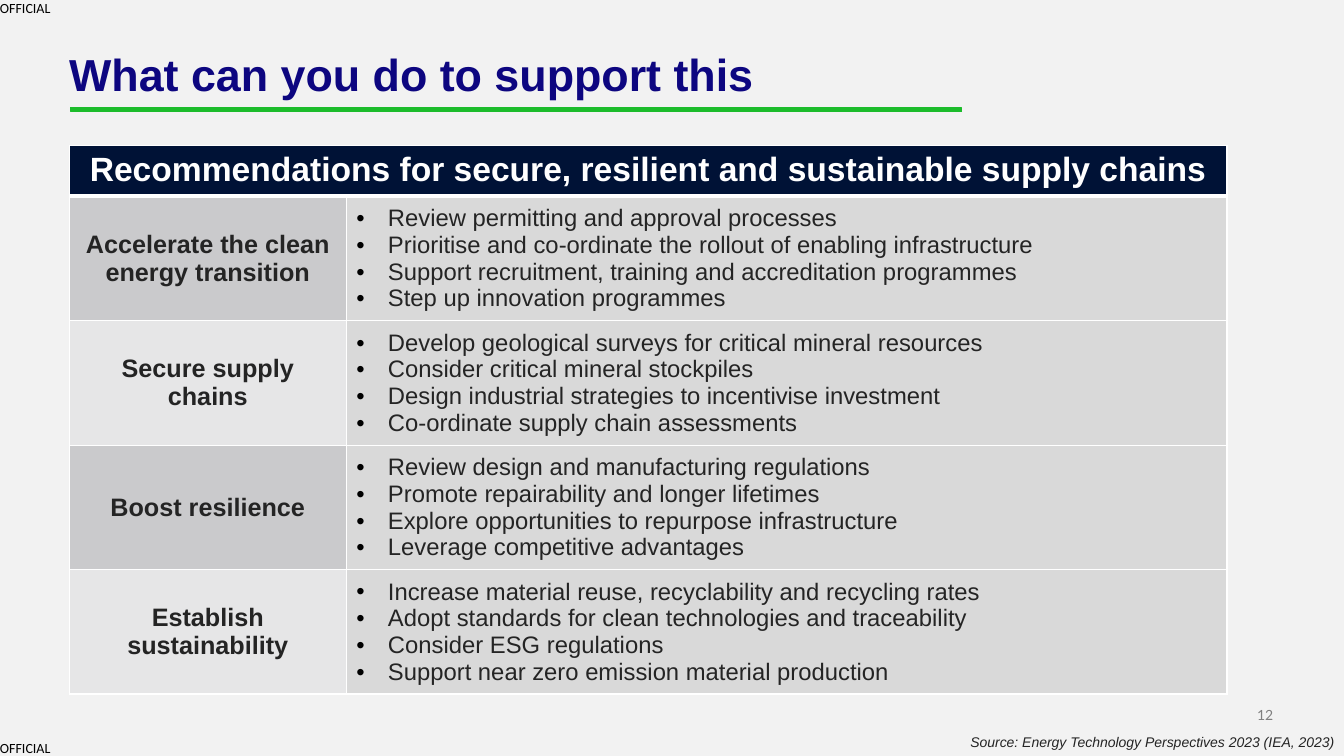
from lxml.etree import SubElement
from pptx import Presentation
from pptx.dml.color import RGBColor
from pptx.enum.text import MSO_ANCHOR as Anchor, PP_ALIGN as Align
from pptx.oxml import parse_xml
from pptx.oxml.ns import nsdecls, qn
from pptx.util import Pt

PAPER = RGBColor(0xF2, 0xF2, 0xF2)
BLACK = RGBColor(0, 0, 0)
WHITE = RGBColor(0xFF, 0xFF, 0xFF)
INK = RGBColor(0x24, 0x24, 0x24)
GREY = RGBColor(0x7F, 0x7F, 0x7F)
INDIGO = RGBColor(0x0D, 0x06, 0x80)
GREEN = RGBColor(0x1C, 0xBC, 0x2B)
NAVY = RGBColor(0x00, 0x12, 0x36)
ACTION_FILL = RGBColor(0xD9, 0xD9, 0xD9)
GOAL_FILLS = (RGBColor(0xCA, 0xCA, 0xCC), RGBColor(0xE6, 0xE6, 0xE7))

HEADING = "Recommendations for secure, resilient and sustainable supply chains"
RECOMMENDATIONS = {
    "Accelerate the clean energy transition": (
        "Review permitting and approval processes",
        "Prioritise and co-ordinate the rollout of enabling infrastructure",
        "Support recruitment, training and accreditation programmes",
        "Step up innovation programmes",
    ),
    "Secure supply chains": (
        "Develop geological surveys for critical mineral resources",
        "Consider critical mineral stockpiles",
        "Design industrial strategies to incentivise investment",
        "Co-ordinate supply chain assessments",
    ),
    "Boost resilience": (
        "Review design and manufacturing regulations",
        "Promote repairability and longer lifetimes",
        "Explore opportunities to repurpose infrastructure",
        "Leverage competitive advantages",
    ),
    "Establish sustainability": (
        "Increase material reuse, recyclability and recycling rates",
        "Adopt standards for clean technologies and traceability",
        "Consider ESG regulations",
        "Support near zero emission material production",
    ),
}
LEFT = 49.4
COLUMN_WIDTHS = (198, 629)
HEADER_HEIGHT = 36
ROW_HEIGHT = 88.8


def write(para, text, size=10, font="Arial", color=INK, bold=False, italic=False,
          align=Align.LEFT, spacing=None):
    """Write one formatted span of text into a paragraph."""
    para.alignment = align
    if spacing:
        para.line_spacing = spacing
    span = para.add_run()
    span.text = text
    span.font.size = Pt(size)
    span.font.name = font
    span.font.color.rgb = color
    span.font.bold = bold
    span.font.italic = italic


def add_text(page, left, top, width, height, text, inset=(0, 0), anchor=Anchor.TOP, **style):
    """Add a text box holding a single paragraph."""
    box = page.shapes.add_textbox(Pt(left), Pt(top), Pt(width), Pt(height))
    frame = box.text_frame
    frame.word_wrap = True
    frame.vertical_anchor = anchor
    frame.margin_left = frame.margin_right = Pt(inset[0])
    frame.margin_top = frame.margin_bottom = Pt(inset[1])
    write(frame.paragraphs[0], text, **style)


def add_underline(page, left, top, right, bottom):
    """Add the green bar below the title."""
    outline = page.shapes.build_freeform(Pt(left), Pt(top))
    corners = ((right, top), (right, bottom), (left, bottom))
    outline.add_line_segments([(Pt(x), Pt(y)) for x, y in corners], close=True)
    bar = outline.convert_to_shape()
    bar.shadow.inherit = False
    bar.fill.solid()
    bar.fill.fore_color.rgb = GREEN
    bar.line.color.rgb = GREEN
    bar.line.width = Pt(0.75)


def format_cell(cell, fill, bottom=1):
    """Set the fill, centred anchor and white borders of a cell."""
    cell.fill.solid()
    cell.fill.fore_color.rgb = fill
    cell.vertical_anchor = Anchor.MIDDLE
    widths = {"lnL": 1, "lnR": 1, "lnT": 1, "lnB": bottom}
    for index, (side, width) in enumerate(widths.items()):
        border = parse_xml(
            f'<a:{side} {nsdecls("a")} w="{Pt(width)}"><a:solidFill>'
            f'<a:srgbClr val="{WHITE}"/></a:solidFill></a:{side}>')
        cell._tc.get_or_add_tcPr().insert(index, border)


def add_bullet(para):
    """Give a paragraph a black bullet with a hanging indent."""
    props = para._p.get_or_add_pPr()
    props.set("marL", str(Pt(22.5)))
    props.set("indent", str(Pt(-22.5)))
    color = SubElement(props, qn("a:buClr"))
    SubElement(color, qn("a:srgbClr"), val=str(BLACK))
    SubElement(props, qn("a:buFont"), typeface="Arial")
    SubElement(props, qn("a:buChar"), char="•")


def add_recommendations(page):
    """Add the table of goals and their recommended actions."""
    count = len(RECOMMENDATIONS)
    height = HEADER_HEIGHT + count * ROW_HEIGHT
    table = page.shapes.add_table(count + 1, 2, Pt(LEFT), Pt(104.2),
                                  Pt(sum(COLUMN_WIDTHS)), Pt(height)).table
    table.horz_banding = False
    for column, width in zip(table.columns, COLUMN_WIDTHS):
        column.width = Pt(width)
    for index, row in enumerate(table.rows):
        row.height = Pt(ROW_HEIGHT if index else HEADER_HEIGHT)

    header = table.cell(0, 0)
    header.merge(table.cell(0, 1))
    for column in range(2):
        format_cell(table.cell(0, column), NAVY, bottom=3)
    header.vertical_anchor = Anchor.TOP
    write(header.text_frame.paragraphs[0], HEADING, size=24, color=WHITE, bold=True,
          align=Align.CENTER)

    for index, (goal, actions) in enumerate(RECOMMENDATIONS.items()):
        goal_cell, action_cell = table.rows[index + 1].cells
        format_cell(goal_cell, GOAL_FILLS[index % 2])
        write(goal_cell.text_frame.paragraphs[0], goal, size=18, bold=True, align=Align.CENTER)
        format_cell(action_cell, ACTION_FILL)
        frame = action_cell.text_frame
        for position, action in enumerate(actions):
            para = frame.add_paragraph() if position else frame.paragraphs[0]
            write(para, action, size=17)
            add_bullet(para)


def main():
    """Build the slide and save the deck."""
    deck = Presentation()
    deck.slide_width, deck.slide_height = Pt(960), Pt(540)
    page = deck.slides.add_slide(deck.slide_layouts[6])
    page.background.fill.solid()
    page.background.fill.fore_color.rgb = PAPER

    add_text(page, 879, 504.6, 30.5, 12.2, "12", font="Lato", color=GREY,
             align=Align.RIGHT, anchor=Anchor.BOTTOM)
    for top in (528.2, 0):
        add_text(page, 0, top, 38.2, 12.2, "OFFICIAL", font="Calibri", color=BLACK)
    add_underline(page, 50.4, 77, 686.9, 79.9)
    add_text(page, LEFT, 37.4, 638, 34.6, "What can you do to support this",
             size=32, color=INDIGO, bold=True, spacing=0.9)
    add_text(page, 607.5, 520.6, 352.5, 19.4,
             "Source: Energy Technology Perspectives 2023 (IEA, 2023)",
             inset=(7.2, 3.6), italic=True, align=Align.RIGHT)
    add_recommendations(page)
    deck.save("out.pptx")


if __name__ == "__main__":
    main()
